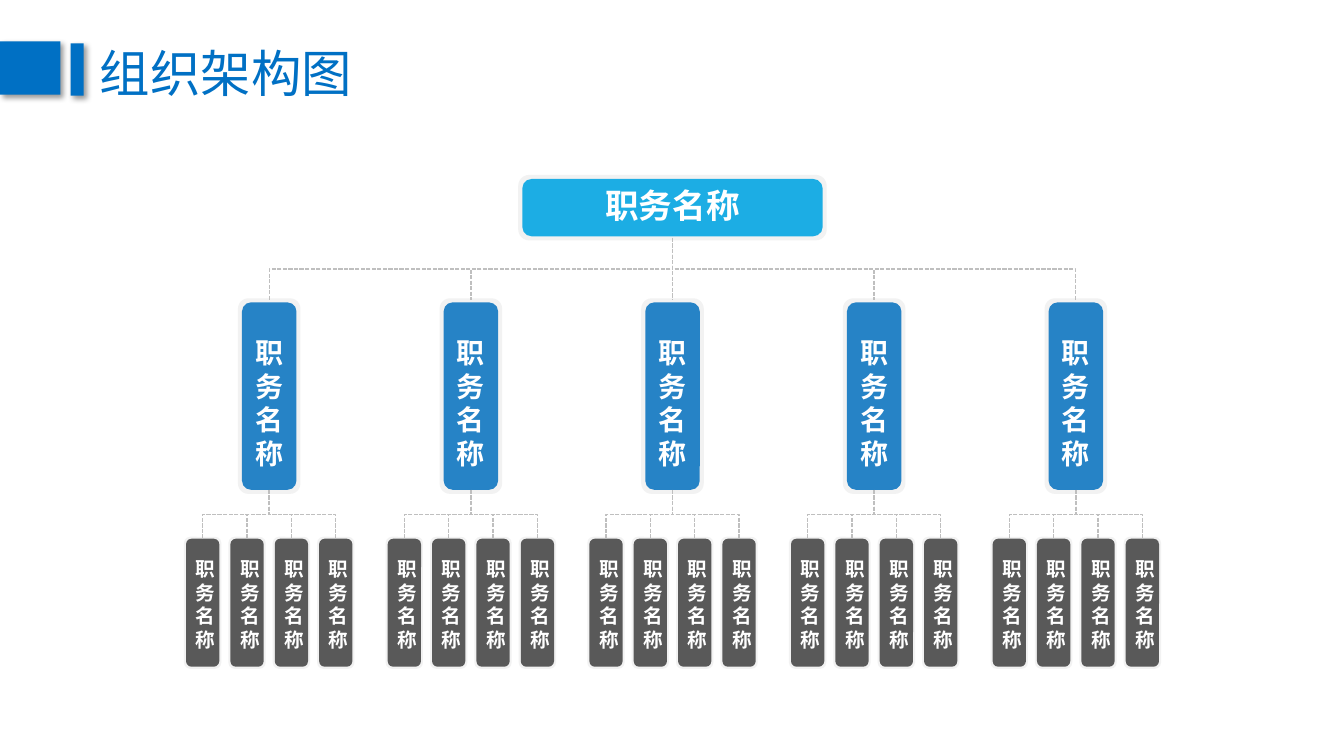
from lxml import etree
from pptx import Presentation
from pptx.dml.color import RGBColor
from pptx.enum.dml import MSO_LINE
from pptx.enum.shapes import MSO_CONNECTOR, MSO_SHAPE
from pptx.enum.text import MSO_ANCHOR, PP_ALIGN
from pptx.oxml import parse_xml
from pptx.oxml.ns import nsdecls, qn
from pptx.util import Inches, Pt

RECT, ROUND = MSO_SHAPE.RECTANGLE, MSO_SHAPE.ROUNDED_RECTANGLE
ELBOW, DASH = MSO_CONNECTOR.ELBOW, MSO_LINE.SQUARE_DOT
LEFT, CENTER = PP_ALIGN.LEFT, PP_ALIGN.CENTER
MIDDLE, TOP = MSO_ANCHOR.MIDDLE, MSO_ANCHOR.TOP

BLUE = RGBColor(0x00, 0x70, 0xC4)
SKY = RGBColor(0x1C, 0xAD, 0xE4)
OCEAN = RGBColor(0x26, 0x83, 0xC6)
SLATE = RGBColor(0x59, 0x59, 0x59)
PALE = RGBColor(0xF2, 0xF2, 0xF2)
GRAY = RGBColor(0xBF, 0xBF, 0xBF)
WHITE = RGBColor(0xFF, 0xFF, 0xFF)

ROLE = "职务名称"
SHADOW = (
    f'<a:effectLst {nsdecls("a")}><a:outerShdw blurRad="50800" dist="38100" '
    'dir="2700000" algn="tl" rotWithShape="0"><a:srgbClr val="000000">'
    '<a:alpha val="40000"/></a:srgbClr></a:outerShdw></a:effectLst>'
)


class Chart:
    """Draws the parts of the organisation chart on one slide."""

    head_font = "Noto Sans CJK SC"
    font = "Calibri"

    def __init__(self, slide):
        self.slide = slide
        self.shapes = slide.shapes

    def words(self, frame, text, size, color, face, bold, align):
        par = frame.paragraphs[0]
        par.alignment = align
        run = par.add_run()
        run.text = text
        font = run.font
        font.size, font.bold, font.name = Pt(size), bold, face
        font.color.rgb = color
        east = etree.SubElement(run._r.get_or_add_rPr(), qn("a:ea"))
        east.set("typeface", face)
        return run

    def title(self, text, x, y, w, h):
        box = self.shapes.title
        box.left, box.top = Inches(x), Inches(y)
        box.width, box.height = Inches(w), Inches(h)
        frame = box.text_frame
        frame.word_wrap = False
        frame.vertical_anchor = MIDDLE
        run = self.words(frame, text, 36, BLUE, self.head_font, False, LEFT)
        fill = run._r.rPr.find(qn("a:solidFill"))
        fill.addnext(parse_xml(SHADOW))

    def block(self, kind, x, y, w, h, fill):
        shape = self.shapes.add_shape(
            kind, Inches(x), Inches(y), Inches(w), Inches(h))
        shape.shadow.inherit = False
        shape.fill.solid()
        shape.fill.fore_color.rgb = fill
        shape.line.fill.background()
        return shape

    def bar(self, x, y, w, h):
        props = self.block(RECT, x, y, w, h, BLUE)._element.spPr
        props.remove(props.find(qn("a:effectLst")))
        props.append(parse_xml(SHADOW))

    def plate(self, mid, y, w, h, rim, fill, turn=0):
        """A rounded plate with a pale rim, both centred on (mid, y)."""
        for edge, color in ((rim, PALE), (0, fill)):
            wide, high = w + 2 * edge, h + 2 * edge
            shape = self.block(
                ROUND, mid - wide / 2, y - high / 2, wide, high, color)
            shape.rotation = turn

    def label(self, mid, y, w, h, size):
        box = self.shapes.add_textbox(
            Inches(mid - w / 2), Inches(y), Inches(w), Inches(h))
        frame = box.text_frame
        frame.word_wrap = True
        frame.vertical_anchor = TOP
        self.words(frame, ROLE, size, WHITE, self.font, True, CENTER)

    def link(self, x1, y1, x2, y2):
        """A dashed elbow that leaves downwards, so its frame is turned."""
        w, h = y2 - y1, abs(x2 - x1)
        left, top = (x1 + x2 - w) / 2, (y1 + y2 - h) / 2
        right = x2 > x1
        start, end = (left + w, left) if right else (left, left + w)
        line = self.shapes.add_connector(
            ELBOW, Inches(start), Inches(top), Inches(end), Inches(top + h))
        line.line.color.rgb = GRAY
        line.line.width = Pt(1)
        line.line.dash_style = DASH
        props = line._element.spPr
        props.find(qn("a:xfrm")).set("rot", "16200000" if right else "5400000")
        etree.SubElement(props, qn("a:effectLst"))


def main():
    deck = Presentation()
    deck.slide_width, deck.slide_height = Inches(13.33), Inches(7.5)
    chart = Chart(deck.slides.add_slide(deck.slide_layouts[5]))

    # Heading
    chart.title("组织架构图", 0.89, 0.36, 2.73, 0.71)
    chart.bar(0, 0.41, 0.6, 0.53)
    chart.bar(0.7, 0.43, 0.13, 0.52)

    # Top post
    root = 6.67
    chart.plate(root, 2.06, 2.98, 0.57, 0.04, SKY)
    chart.label(root, 1.79, 2.1, 0.5, 24)

    # Five heads, each with four posts below
    heads = [root + 2 * (i - 2) for i in range(5)]
    for head in heads:
        chart.plate(head, 3.93, 1.86, 0.54, 0.04, OCEAN, 90)
        chart.label(head, 3.28, 0.54, 1.29, 20)
        posts = [head + 0.44 * (j - 1.5) for j in range(4)]
        for post in posts:
            chart.plate(post, 5.98, 1.27, 0.33, 0.02, SLATE, 90)
            chart.label(post, 5.48, 0.33, 1.04, 14)
        for post in posts:
            chart.link(head, 4.86, post, 5.35)

    # Lines from the top post to the heads
    for head in heads:
        chart.link(root, 2.36, head, 2.98)

    deck.save("out.pptx")


if __name__ == "__main__":
    main()
